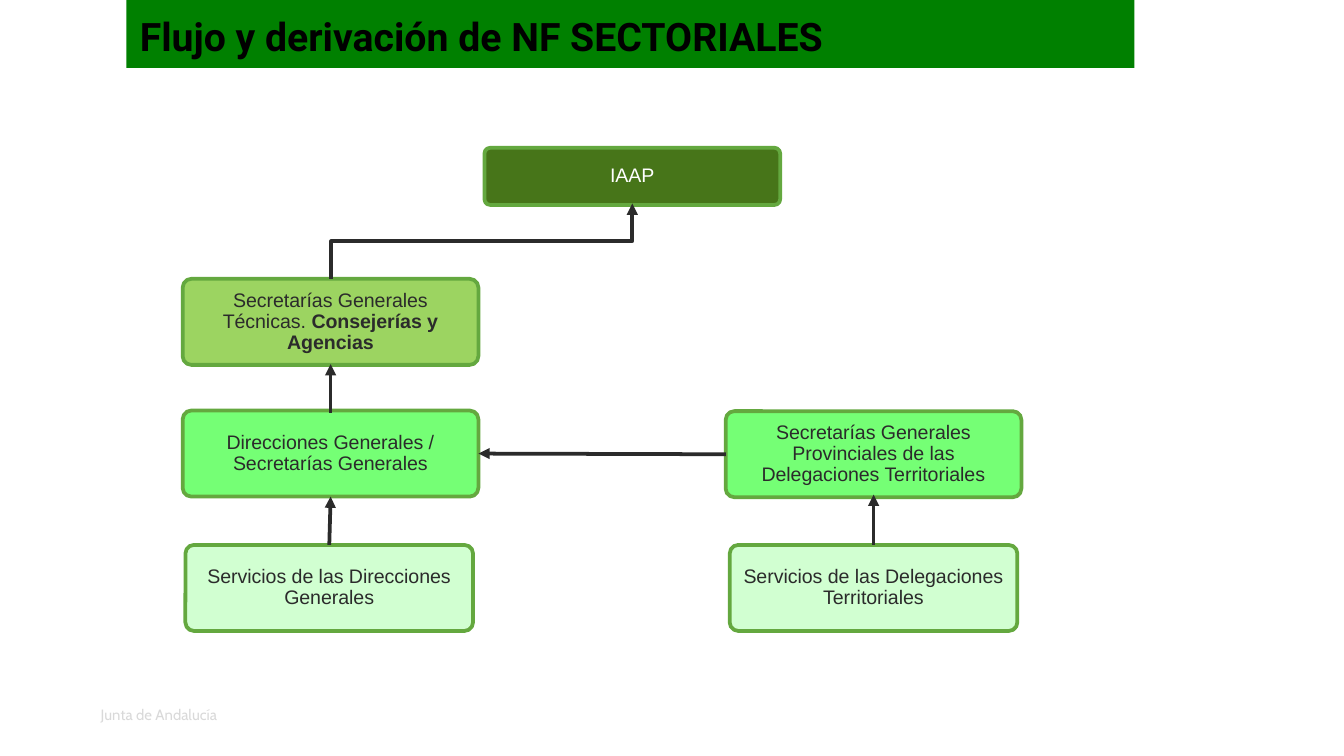
from lxml.etree import SubElement as Sub
from pptx import Presentation
from pptx.dml.color import RGBColor as Rgb
from pptx.enum.shapes import MSO_CONNECTOR as Link, MSO_SHAPE as Form
from pptx.enum.text import MSO_ANCHOR as Anchor, PP_ALIGN as Align
from pptx.oxml.ns import qn
from pptx.util import Pt

PX = 4572
HUES = {
    "bar": "008000", "top": "336600", "lime": "92D050", "mid": "66FF66",
    "pale": "CCFFCC", "edge": "64A83F", "ink": "2B2B2B", "white": "FFFFFF",
    "black": "000000", "foot": "D9D9D9",
}
NODES = [
    ((721, 220, 440, 85), "top", "white", [("IAAP", False)]),
    ((272, 415, 440, 128), "lime", "ink",
     [("Secretarías Generales Técnicas. ", False), ("Consejerías y Agencias", True)]),
    ((272, 611, 440, 128), "mid", "ink",
     [("Direcciones Generales / Secretarías Generales", False)]),
    ((1080, 612, 440, 128), "mid", "ink",
     [("Secretarías Generales Provinciales de las Delegaciones Territoriales", False)]),
    ((276, 811, 428, 128), "pale", "ink",
     [("Servicios de las Direcciones Generales", False)]),
    ((1086, 811, 428, 128), "pale", "ink",
     [("Servicios de las Delegaciones Territoriales", False)]),
]
LINKS = [
    (492, 614, 492, 542), (1080, 676, 712, 675),
    (1300, 811, 1300, 736), (490, 811, 492, 739),
]


def emu(box):
    """Turn px lengths into EMU."""
    return [n * PX for n in box]


def hue(name):
    """Return a named colour."""
    return Rgb.from_string(HUES[name])


def put(item, **vals):
    """Set attributes from format values."""
    for key, val in vals.items():
        setattr(item, key, val)


def pad(frame, side, top, anchor):
    """Set the margins, wrap and anchor of a text frame."""
    put(frame, margin_left=side * PX, margin_right=side * PX, margin_top=top * PX,
        margin_bottom=top * PX, word_wrap=True, vertical_anchor=anchor)


def write(para, runs, face, size, tone):
    """Add (text, bold) runs to a paragraph."""
    for text, bold in runs:
        run = para.add_run()
        run.text = text
        put(run.font, name=face, size=Pt(size), bold=bold)
        run.font.color.rgb = hue(tone)


def head(slide, box):
    """Place the title bar."""
    title = slide.shapes.title
    put(title, **dict(zip(("left", "top", "width", "height"), emu(box))))
    title.fill.solid()
    title.fill.fore_color.rgb = hue("bar")
    pad(title.text_frame, 20, 18, Anchor.TOP)
    para = title.text_frame.paragraphs[0]
    para.alignment = Align.LEFT
    write(para, [("Flujo y derivación de NF SECTORIALES", True)], "Roboto", 21, "black")


def node(slide, box, fill, tone, runs):
    """Place one rounded box with centred text."""
    shape = slide.shapes.add_shape(Form.ROUNDED_RECTANGLE, *emu(box))
    shape.shadow.inherit = False
    shape.adjustments[0] = 0.1
    shape.fill.solid()
    shape.fill.fore_color.rgb = hue(fill)
    color = shape.element.spPr.find(qn("a:solidFill"))[0]
    Sub(color, qn("a:alpha"), val="90000")
    shape.line.color.rgb = hue("edge")
    shape.line.width = Pt(2)
    pad(shape.text_frame, 10, 8, Anchor.MIDDLE)
    para = shape.text_frame.paragraphs[0]
    put(para, alignment=Align.CENTER, line_spacing=0.9)
    write(para, runs, "Arial", 10.5, tone)


def arrow(slide, ends, kind=Link.STRAIGHT):
    """Draw one arrow and return it."""
    line = slide.shapes.add_connector(kind, *emu(ends))
    line.line.color.rgb = hue("ink")
    line.line.width = Pt(2)
    props = line.element.spPr
    Sub(props.find(qn("a:ln")), qn("a:tailEnd"), type="triangle")
    Sub(props, qn("a:effectLst"))
    return line


def flow(slide):
    """Place the boxes and the arrows between them."""
    for item in NODES:
        node(slide, *item)
    for ends in LINKS:
        arrow(slide, ends)
    bend = arrow(slide, (773, 583, 661, 135), Link.ELBOW)
    bend.element.spPr.find(qn("a:xfrm")).set("rot", "5400000")


def foot(slide, box):
    """Place the footer text."""
    frame = slide.shapes.add_textbox(*emu(box)).text_frame
    pad(frame, 0, 0, Anchor.TOP)
    write(frame.paragraphs[0], [("Junta de Andalucía", False)], "Cabin", 8, "foot")


def main():
    """Build and save the slide."""
    deck = Presentation()
    put(deck, slide_width=2000 * PX, slide_height=1125 * PX)
    slide = deck.slides.add_slide(deck.slide_layouts[5])
    head(slide, (188, 0, 1500, 101))
    flow(slide)
    foot(slide, (150, 1050, 388, 44))
    deck.save("out.pptx")


if __name__ == "__main__":
    main()
